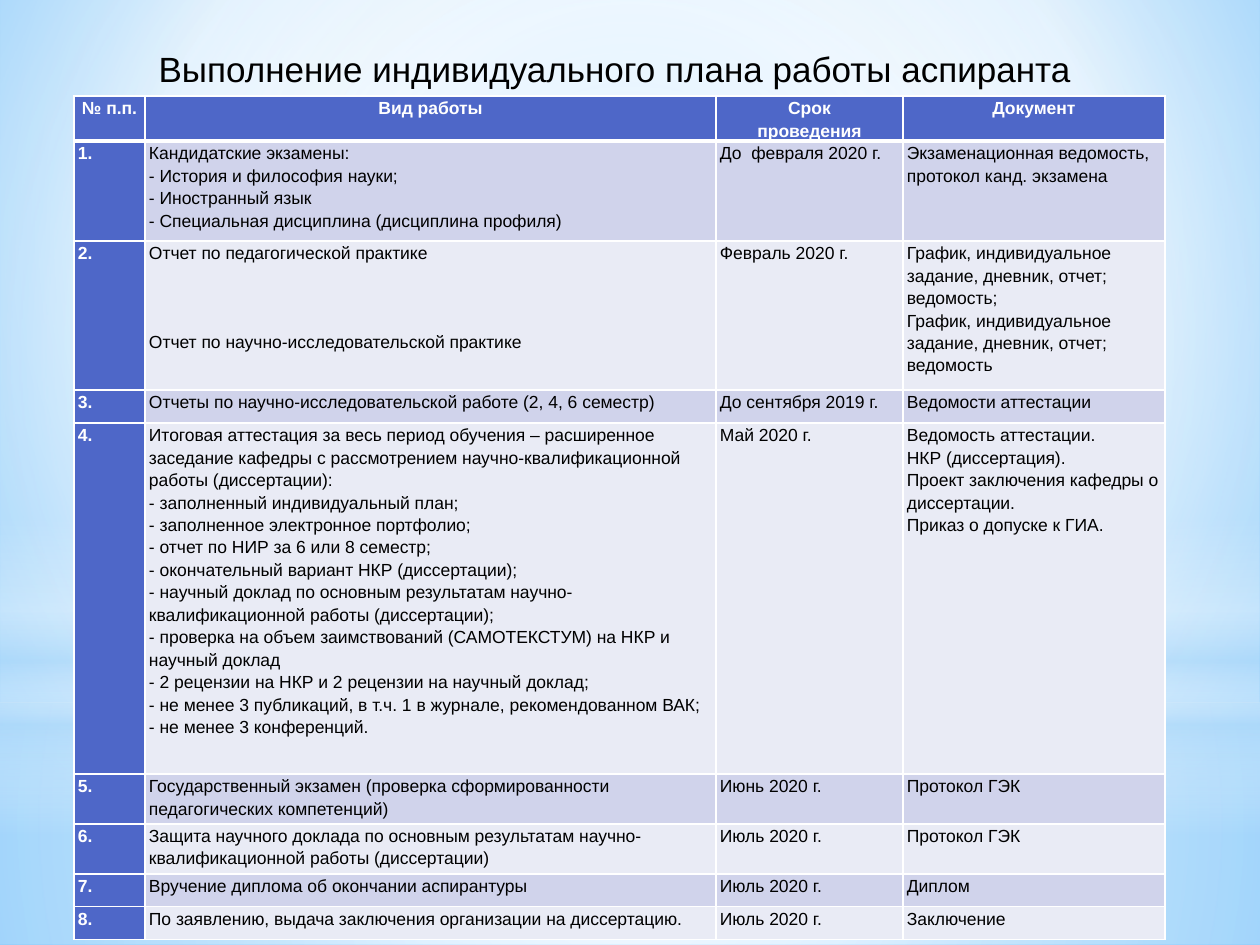
"""Build the slide on carrying out a postgraduate's individual work plan."""
from lxml.etree import SubElement
from pptx import Presentation
from pptx.dml.color import RGBColor
from pptx.enum.shapes import MSO_SHAPE as Shape
from pptx.enum.text import MSO_ANCHOR as Anchor, PP_ALIGN as Align
from pptx.oxml.ns import qn
from pptx.util import Pt

PX = 914400 // 126
FONT = "Arial"
COLORS = {"white": "FFFFFF", "black": "000000", "blue": "4E67C8", "odd": "D0D3EB",
          "even": "E9EBF5", "mist": "B4DCFA", "sky": "9ED5FF", "deep": "5BB9FF"}

TITLE = "Выполнение индивидуального плана работы аспиранта"
TITLE_BOX = (64, 40, 1102, 93)
HEADER = ["№ п.п.", "Вид работы", "Срок\nпроведения", "Документ"]
REPORT_DOCS = "График, индивидуальное задание, дневник, отчет; ведомость"
WORKS = [
    ("Кандидатские экзамены:\n- История и философия науки;\n- Иностранный язык\n"
     "- Специальная дисциплина (дисциплина профиля)",
     "До  февраля 2020 г.", "Экзаменационная ведомость, протокол канд. экзамена"),
    ("Отчет по педагогической практике\nОтчет по научно-исследовательской практике",
     "Февраль 2020 г.", f"{REPORT_DOCS};\n{REPORT_DOCS}"),
    ("Отчеты по научно-исследовательской работе (2, 4, 6 семестр)",
     "До сентября 2019 г.", "Ведомости аттестации"),
    ("Итоговая аттестация за весь период обучения – расширенное заседание кафедры "
     "с рассмотрением научно-квалификационной работы (диссертации):\n"
     "- заполненный индивидуальный план;\n"
     "- заполненное электронное портфолио;\n"
     "- отчет по НИР за 6 или 8 семестр;\n"
     "- окончательный вариант НКР (диссертации);\n"
     "- научный доклад по основным результатам научно-квалификационной работы (диссертации);\n"
     "- проверка на объем заимствований (САМОТЕКСТУМ) на НКР и научный доклад\n"
     "- 2 рецензии на НКР и 2 рецензии на научный доклад;\n"
     "- не менее 3 публикаций, в т.ч. 1 в журнале, рекомендованном ВАК;\n"
     "- не менее 3 конференций.",
     "Май 2020 г.", "Ведомость аттестации.\nНКР (диссертация).\n"
     "Проект заключения кафедры о диссертации.\nПриказ о допуске к ГИА."),
    ("Государственный экзамен (проверка сформированности педагогических компетенций)",
     "Июнь 2020 г.", "Протокол ГЭК"),
    ("Защита научного доклада по основным результатам научно-квалификационной работы "
     "(диссертации)", "Июль 2020 г.", "Протокол ГЭК"),
    ("Вручение диплома об окончании аспирантуры", "Июль 2020 г.", "Диплом"),
    ("По заявлению, выдача заключения организации на диссертацию.",
     "Июль 2020 г.", "Заключение"),
]
PLAN_AT = (74, 96)
COLUMNS = [71, 571, 187, 262]
ROWS = [44, 100, 149, 33, 351, 50, 50, 33, 33]
PRACTICE_ROW, PRACTICE_GAP = 2, 38

CENTER = (50, 50, 50, 50)
SKY_STOPS = [(0, "sky", 100), (60, "white", 100), (100, "deep", 100)]
SKY_FOCUS = (20, 10, 20, 60)
GLOWS = [
    (Shape.RECTANGLE, (0, 703, 1260, 242), CENTER,
     [(0, "white", 91), (37, "white", 76), (100, "mist", 79)]),
    (Shape.RECTANGLE, (0, 0, 1260, 703), CENTER,
     [(0, "white", 89), (48, "white", 62), (100, "mist", 79)]),
    (Shape.RECTANGLE, (0, 519, 1260, 315), None,
     [(0, "white", 0), (29, "white", 30), (45, "mist", 40), (55, "white", 26),
      (65, "mist", 60), (100, "white", 0)]),
    (Shape.OVAL, (0, 221, 1260, 703), CENTER, [(0, "white", 100), (56, "white", 0)]),
]


def px(*lengths):
    return [length * PX for length in lengths]


def add(parent, tag, **attributes):
    return SubElement(parent, qn(f"a:{tag}"), {k: str(v) for k, v in attributes.items()})


def add_color(parent, name, alpha=100):
    color = add(parent, "srgbClr", val=COLORS[name])
    if alpha < 100:
        add(color, "alpha", val=alpha * 1000)


def paint_gradient(fill, owner, stops, focus):
    fill.gradient()
    gradient = owner.find(f".//{qn('a:gradFill')}")
    gradient.clear()
    gradient.set("rotWithShape", "1")
    stop_list = add(gradient, "gsLst")
    for position, name, alpha in stops:
        add_color(add(stop_list, "gs", pos=position * 1000), name, alpha)
    if focus:
        sides = {side: share * 1000 for side, share in zip("ltrb", focus)}
        add(add(gradient, "path", path="circle"), "fillToRect", **sides)
    else:
        add(gradient, "lin", ang=90 * 60000, scaled=0)


def write(frame, text, size, color, bold=False, align=Align.LEFT, spacing=None):
    frame.word_wrap = True
    frame.text = text
    for paragraph in frame.paragraphs:
        paragraph.alignment = align
        paragraph.line_spacing = spacing
        for run in paragraph.runs:
            run.font.name, run.font.size, run.font.bold = FONT, Pt(size), bold
            run.font.color.rgb = RGBColor.from_string(COLORS[color])


def fill_cell(cell, text, row, column):
    header, label = row == 0, row == 0 or column == 0
    cell.margin_left = cell.margin_right = 4 * PX
    cell.margin_top = cell.margin_bottom = 0
    write(cell.text_frame, text, 10, "white" if label else "black", label,
          Align.CENTER if header else Align.LEFT, 1.15)
    properties = cell._tc.get_or_add_tcPr()
    for side in "LRTB":
        heavy = (header and side == "B") or (row == 1 and side == "T")
        border = add(properties, f"ln{side}", w=Pt(3 if heavy else 1))
        add_color(add(border, "solidFill"), "white")
    cell.fill.solid()
    shade = "blue" if label else "odd" if row % 2 else "even"
    cell.fill.fore_color.rgb = RGBColor.from_string(COLORS[shade])


def add_plan(slide):
    plan = slide.shapes.add_table(len(ROWS), len(COLUMNS),
                                  *px(*PLAN_AT, sum(COLUMNS), sum(ROWS))).table
    for column, width in zip(plan.columns, COLUMNS):
        column.width = width * PX
    for row, height in zip(plan.rows, ROWS):
        row.height = height * PX
    lines = [HEADER] + [(f"{number}.", *work) for number, work in enumerate(WORKS, 1)]
    for r, line in enumerate(lines):
        for c, text in enumerate(line):
            fill_cell(plan.cell(r, c), text, r, c)
    practices = plan.cell(PRACTICE_ROW, 1).text_frame.paragraphs
    practices[1].space_before = Pt(PRACTICE_GAP)


def main():
    deck = Presentation()
    deck.slide_width, deck.slide_height = px(1260, 945)
    slide = deck.slides.add_slide(deck.slide_layouts[6])
    paint_gradient(slide.background.fill, slide._element, SKY_STOPS, SKY_FOCUS)
    for kind, box, focus, stops in GLOWS:
        glow = slide.shapes.add_shape(kind, *px(*box))
        glow.shadow.inherit = False
        glow.line.fill.background()
        paint_gradient(glow.fill, glow.element, stops, focus)
    add_plan(slide)
    title = slide.shapes.add_textbox(*px(*TITLE_BOX)).text_frame
    title.vertical_anchor = Anchor.TOP
    title.margin_top = 8 * PX
    write(title, TITLE, 20, "black", align=Align.CENTER)
    deck.save("out.pptx")


if __name__ == "__main__":
    main()
